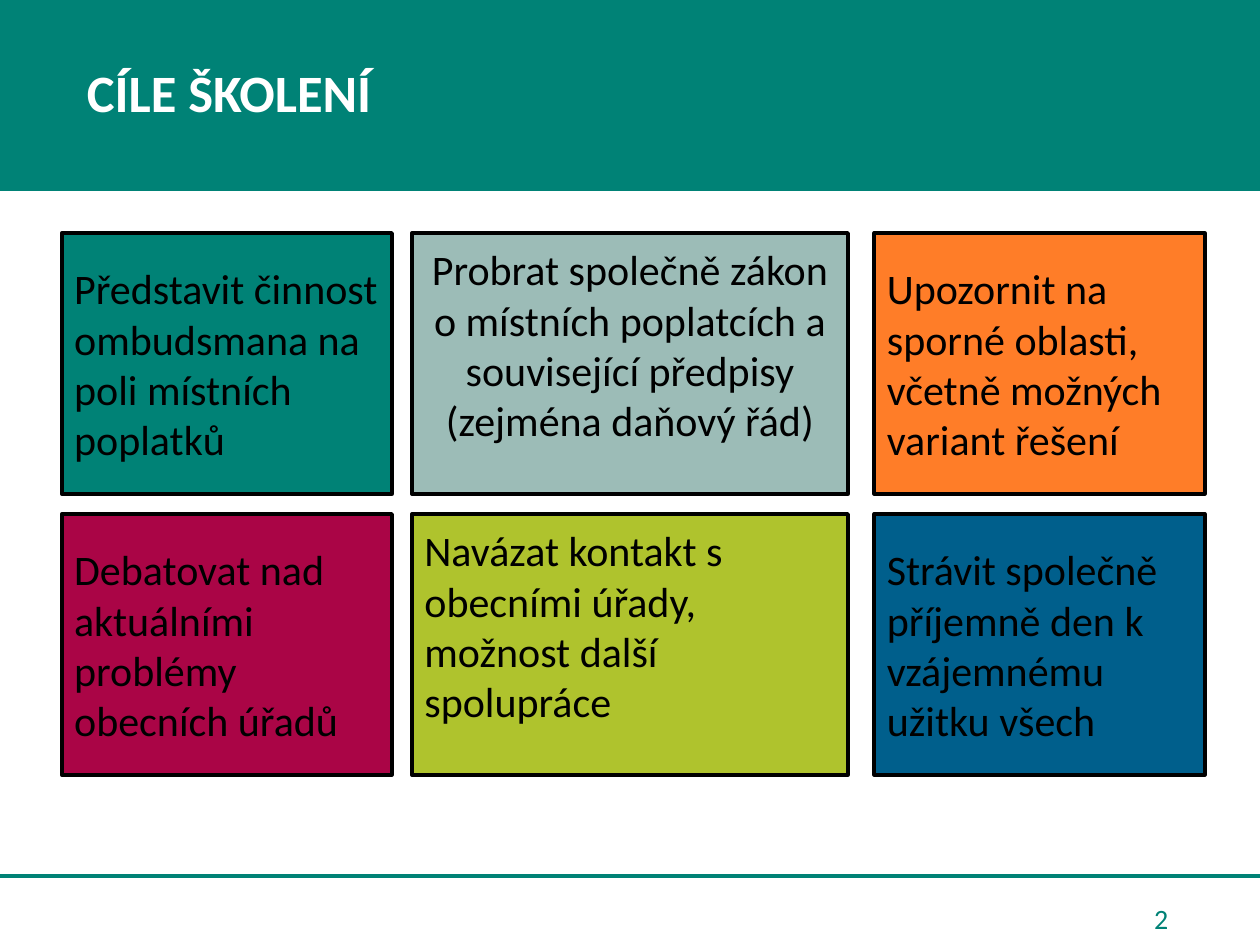
"""Build the training goals slide: a title band and six coloured goal boxes."""
from dataclasses import dataclass

from lxml.etree import SubElement
from pptx import Presentation
from pptx.dml.color import RGBColor
from pptx.enum.shapes import MSO_CONNECTOR, MSO_SHAPE
from pptx.enum.text import MSO_ANCHOR, PP_ALIGN
from pptx.oxml.ns import qn
from pptx.util import Inches, Pt


@dataclass
class Theme:
    font: str = "Calibri"
    teal: str = "008276"
    sage: str = "9CBCB7"
    orange: str = "FF7D28"
    wine: str = "AA0546"
    lime: str = "AFC32D"
    blue: str = "005F8C"
    white: str = "FFFFFF"
    black: str = "000000"
    title: int = 30
    body: int = 24
    small: int = 16


def add_box(slide, area, fill, edge, width):
    box = slide.shapes.add_shape(MSO_SHAPE.RECTANGLE, *map(Inches, area))
    box.shadow.inherit = False
    box.fill.solid()
    box.fill.fore_color.rgb = RGBColor.from_string(fill)
    box.line.color.rgb = RGBColor.from_string(edge)
    box.line.width = Pt(width)
    return box


def set_text(shape, text, size, color, align=PP_ALIGN.LEFT, bold=False):
    frame = shape.text_frame
    frame.text = text
    frame.word_wrap = True
    frame.vertical_anchor = MSO_ANCHOR.MIDDLE
    para = frame.paragraphs[0]
    para.alignment = align
    font = para.runs[0].font
    font.name = theme.font
    font.size = Pt(size)
    font.bold = bold
    font.color.rgb = RGBColor.from_string(color)
    return frame


theme = Theme()
deck = Presentation()
deck.slide_width, deck.slide_height = Inches(10), Inches(7.5)
slide = deck.slides.add_slide(deck.slide_layouts[6])

rule = slide.shapes.add_connector(
    MSO_CONNECTOR.STRAIGHT, Inches(-0.03), Inches(6.95), Inches(10.04), Inches(6.95))
rule.line.color.rgb = RGBColor.from_string(theme.teal)
rule.line.width = Pt(2.25)
SubElement(rule.element.spPr, qn("a:effectLst"))

add_box(slide, (0, 0, 10.04, 1.51), theme.teal, theme.teal, 1)
title = slide.shapes.add_textbox(0, 0, Inches(10), Inches(1.51))
frame = set_text(title, "CÍLE ŠKOLENÍ", theme.title, theme.white, bold=True)
frame.margin_left = Inches(0.69)
frame.paragraphs[0].line_spacing = 0.9

number = slide.shapes.add_textbox(Inches(7.08), Inches(7.09), Inches(2.29), Inches(0.4))
set_text(number, "2", theme.small, theme.teal, PP_ALIGN.RIGHT)

left, mid = PP_ALIGN.LEFT, PP_ALIGN.CENTER
cols = [(0.49, 2.62, 0.05), (3.27, 3.46, 0.35), (6.94, 2.62, 0.05)]
rows = [
    (1.85, [
        ("Představit činnost ombudsmana na poli místních poplatků", theme.teal, left),
        ("Probrat společně zákon o místních poplatcích a související předpisy "
         "(zejména daňový řád)", theme.sage, mid),
        ("Upozornit na sporné oblasti, včetně možných variant řešení", theme.orange, left),
    ]),
    (4.08, [
        ("Debatovat nad aktuálními problémy obecních úřadů", theme.wine, left),
        ("Navázat kontakt s obecními úřady, možnost další spolupráce", theme.lime, left),
        ("Strávit společně příjemně den k vzájemnému užitku všech", theme.blue, left),
    ]),
]
for top, goals in rows:
    for (x, width, pad), (text, fill, align) in zip(cols, goals):
        goal = add_box(slide, (x, top, width, 2.07), fill, theme.black, 2.25)
        frame = set_text(goal, text, theme.body, theme.black, align)
        frame.margin_bottom = Inches(pad)

deck.save("out.pptx")
